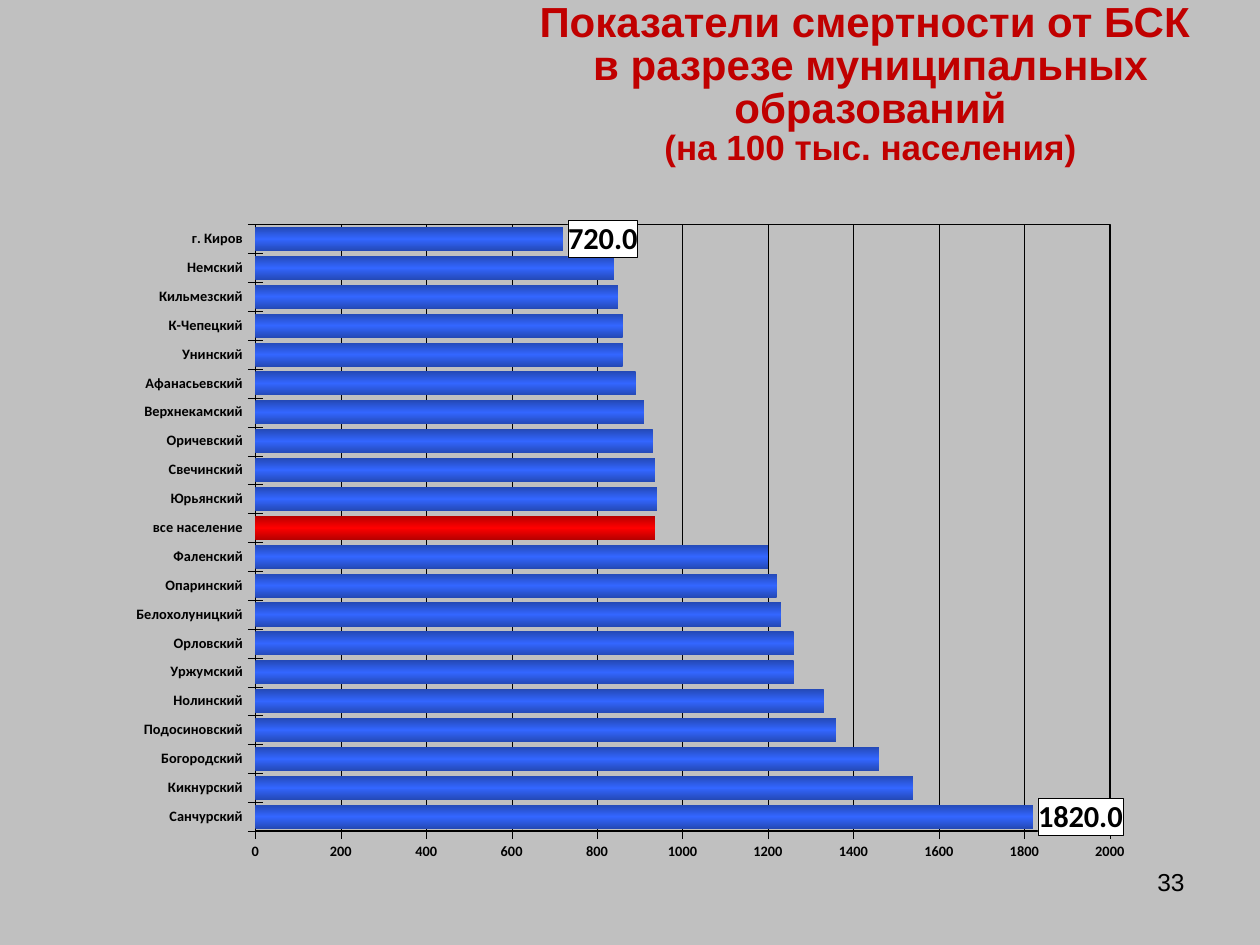
import pptx
import pptx.chart.data
import pptx.dml.color
import pptx.enum.chart
import pptx.enum.text
import pptx.oxml
import pptx.oxml.ns
import pptx.util
from pptx.util import Cm

RGBColor = pptx.dml.color.RGBColor
GREY = RGBColor(0xC0, 0xC0, 0xC0)
BLACK = RGBColor(0, 0, 0)
TITLE_RED = RGBColor(0xC0, 0, 0)
BAR_EDGE = RGBColor(0x24, 0x49, 0xB6)
BAR_MIDDLE = RGBColor(0x33, 0x66, 0xFF)
TOTAL_EDGE = RGBColor(0xB6, 0, 0)
TOTAL_MIDDLE = RGBColor(0xFF, 0, 0)
ALIGN = pptx.enum.text.PP_ALIGN
TICK = pptx.enum.chart.XL_TICK_MARK
TOTAL = "все население"

MORTALITY = [
    ("Санчурский", 1820), ("Кикнурский", 1540), ("Богородский", 1460),
    ("Подосиновский", 1360), ("Нолинский", 1330), ("Уржумский", 1260),
    ("Орловский", 1260), ("Белохолуницкий", 1230), ("Опаринский", 1220),
    ("Фаленский", 1200), (TOTAL, 935.5), ("Юрьянский", 940),
    ("Свечинский", 935), ("Оричевский", 930), ("Верхнекамский", 910),
    ("Афанасьевский", 890), ("Унинский", 860), ("К-Чепецкий", 860),
    ("Кильмезский", 850), ("Немский", 840), ("г. Киров", 720),
]


def style_font(font, name, size, color, bold=False):
    font.name = name
    font.size = pptx.util.Pt(size)
    font.bold = bold
    font.color.rgb = color


def style_line(line, width=0.17):
    line.color.rgb = BLACK
    line.width = pptx.util.Pt(width)


def xml(tag, content):
    namespaces = pptx.oxml.ns.nsdecls("a", "c")
    return pptx.oxml.parse_xml(f"<{tag} {namespaces}>{content}</{tag}>")


def solid(color):
    return f'<a:solidFill><a:srgbClr val="{color}"/></a:solidFill>'


def add_text(slide, box, lines, align, color, bold=False, spacing=None):
    """Add one paragraph; lines holds (text, size) pairs split by line breaks."""
    shape = slide.shapes.add_textbox(*box)
    frame = shape.text_frame
    frame.word_wrap = True
    paragraph = frame.paragraphs[0]
    paragraph.alignment = align
    paragraph.line_spacing = spacing
    for index, (text, size) in enumerate(lines):
        if index:
            paragraph.add_line_break()
        run = paragraph.add_run()
        run.text = text
        style_font(run.font, "Arial", size, color, bold)
    return frame


def style_axis(axis):
    axis.major_tick_mark = TICK.CROSS
    axis.minor_tick_mark = TICK.NONE
    style_font(axis.tick_labels.font, "Calibri", 8.2, BLACK, True)
    style_line(axis.format.line)


def fill_bars(series, total_index):
    """Shade bars from dark edges to a bright middle, with the total in red."""
    series.invert_if_negative = False
    for bar in (series, series.points[total_index]):
        bar.format.fill.gradient()
        bar.format.fill.gradient_angle = 90
    shades = [(BAR_EDGE, BAR_MIDDLE), (TOTAL_EDGE, TOTAL_MIDDLE)]
    for stops, (edge, middle) in zip(series._element.xpath(".//a:gsLst"), shades):
        new_stops = "".join(
            f'<a:gs pos="{position}"><a:srgbClr val="{color}"/></a:gs>'
            for position, color in ((0, edge), (50000, middle), (100000, edge)))
        stops.getparent().replace(stops, xml("a:gsLst", new_stops))


def label_bars(series, indexes):
    """Put a boxed value beside the chosen bars only."""
    series.data_labels.show_value = False
    for index in indexes:
        label = series.points[index].data_label
        style_font(label.font, "Calibri", 17.4, BLACK, True)
        label.position = pptx.enum.chart.XL_LABEL_POSITION.OUTSIDE_END
    white = RGBColor(255, 255, 255)
    for text in series._element.xpath("./c:dLbls/c:dLbl/c:txPr"):
        number_format = xml("c:numFmt", "")
        number_format.set("formatCode", "0.0")
        number_format.set("sourceLinked", "0")
        text.addprevious(number_format)
        text.addprevious(xml(
            "c:spPr", solid(white) + f'<a:ln w="3175">{solid(BLACK)}</a:ln>'))


def frame_plot(chart, left, top, width, height):
    plot_area = chart._chartSpace.xpath("./c:chart/c:plotArea")[0]
    for old in plot_area.xpath("./c:layout"):
        plot_area.remove(old)
    settings = [("layoutTarget", "inner"), ("xMode", "edge"), ("yMode", "edge"),
                ("x", left), ("y", top), ("w", width), ("h", height)]
    content = "".join(f'<c:{name} val="{value}"/>' for name, value in settings)
    plot_area.insert(0, xml("c:layout", f"<c:manualLayout>{content}</c:manualLayout>"))
    plot_area.append(xml(
        "c:spPr", f'<a:noFill/><a:ln w="12700">{solid(BLACK)}</a:ln>'))


def add_mortality_chart(slide):
    data = pptx.chart.data.CategoryChartData()
    names, values = zip(*MORTALITY)
    data.categories = names
    data.add_series("Series 1", values)
    chart = slide.shapes.add_chart(
        pptx.enum.chart.XL_CHART_TYPE.BAR_CLUSTERED,
        Cm(2.03), Cm(4.27), Cm(20.93), Cm(13.59), data).chart
    chart.has_legend = False
    chart.has_title = False
    style_font(chart.font, "Calibri", 17.4, BLACK, True)

    # Axes
    style_axis(chart.category_axis)
    value_axis = chart.value_axis
    style_axis(value_axis)
    value_axis.minimum_scale = 0
    value_axis.maximum_scale = 2000
    value_axis.major_unit = 200
    value_axis.has_major_gridlines = True
    style_line(value_axis.major_gridlines.format.line)

    # Bars
    plot = chart.plots[0]
    plot.gap_width = 20
    plot.vary_by_categories = False
    series = plot.series[0]
    fill_bars(series, names.index(TOTAL))
    label_bars(series, (0, len(names) - 1))
    frame_plot(chart, 0.149, 0.019, 0.823, 0.9)


def main():
    presentation = pptx.Presentation()
    presentation.slide_width = Cm(25.4)
    presentation.slide_height = Cm(19.05)
    slide = presentation.slides.add_slide(presentation.slide_layouts[6])
    slide.background.fill.solid()
    slide.background.fill.fore_color.rgb = GREY

    # Title
    title = add_text(
        slide, (Cm(9.6), Cm(0.33), Cm(15.9), Cm(2.79)),
        [("Показатели смертности от БСК ", 24),
         ("в разрезе муниципальных образований", 24),
         ("(на 100 тыс. населения)", 20)],
        ALIGN.CENTER, TITLE_RED, True, 0.85)
    title.vertical_anchor = pptx.enum.text.MSO_ANCHOR.MIDDLE

    add_mortality_chart(slide)

    # Slide number
    add_text(slide, (Cm(18.21), Cm(17.35), Cm(5.92), Cm(1.32)),
             [("33", 14)], ALIGN.RIGHT, BLACK)
    presentation.save("out.pptx")


if __name__ == "__main__":
    main()
